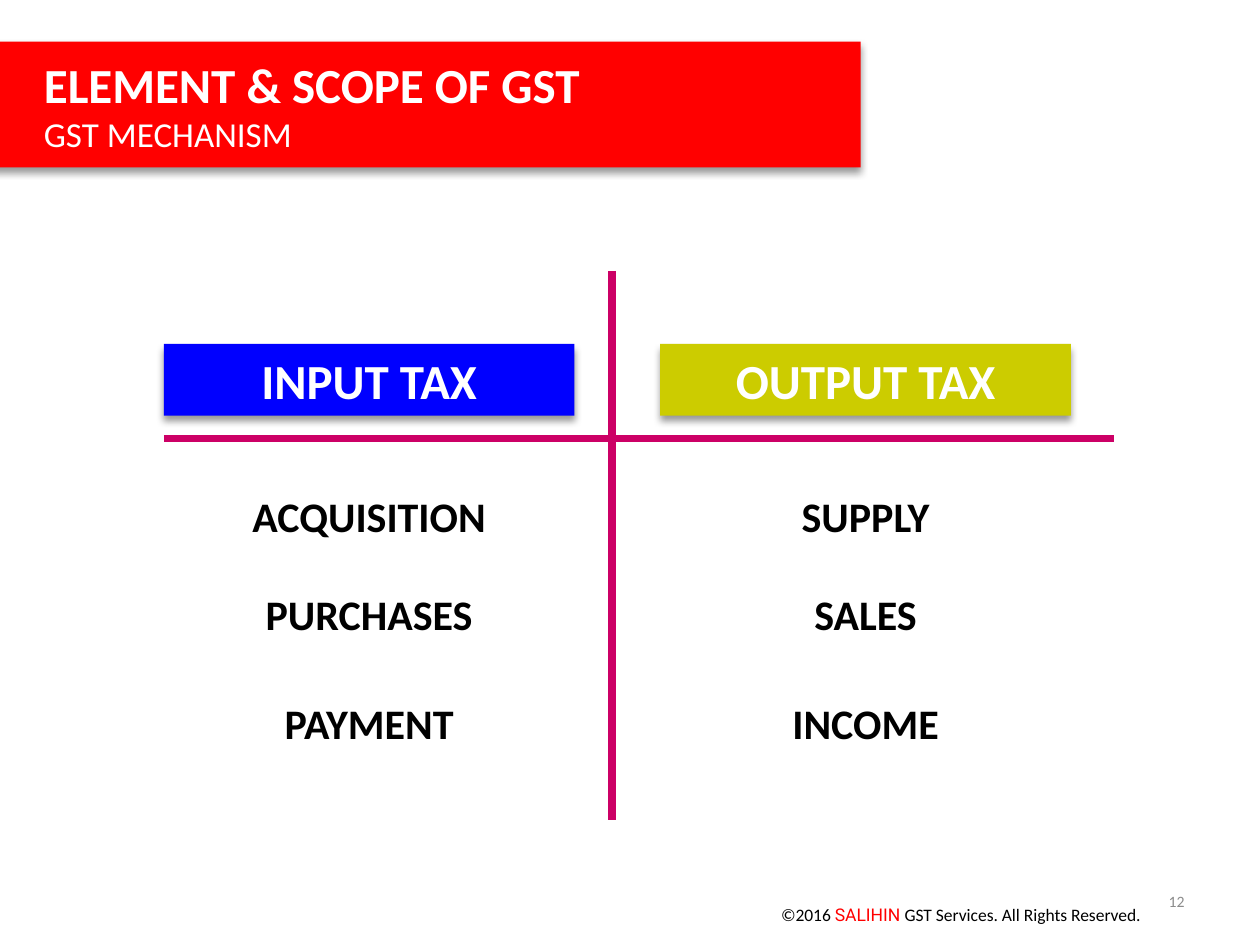
import pptx
import pptx.util
import pptx.dml.color
import pptx.enum.shapes
import pptx.enum.text
import pptx.oxml.ns
from lxml import etree

THEME = {
    "font": "Calibri", "accent_font": "Roboto",
    "red": "FF0000", "blue": "0000FF", "olive": "CCCC00", "rule": "CC0066",
    "white": "FFFFFF", "black": "000000", "grey": "8C8C8C",
    "head": 28, "sub": 20, "item": 24, "foot": 10, "number": 9, "rule_width": 4.5,
}

# A paragraph is a list of runs: (text, size, colour, bold, font)
BANNER = [
    [("ELEMENT & SCOPE OF GST", "head", "white", True, "font")],
    [("GST MECHANISM", "sub", "white", False, "font")],
]
COLUMNS = [
    ("INPUT TAX", "blue", ["ACQUISITION", "PURCHASES", "PAYMENT"]),
    ("OUTPUT TAX", "olive", ["SUPPLY", "SALES", "INCOME"]),
]
FOOTER = [[
    ("©2016 ", "foot", "black", False, "font"),
    ("SALIHIN ", "foot", "red", False, "accent_font"),
    ("GST Services. All Rights Reserved.", "foot", "black", False, "font"),
]]
NUMBER = [[("12", "number", "grey", False, "font")]]

# Grid of the T-account, in inches
COL_LEFT, COL_STEP, COL_WIDTH = 1.3, 3.94, 3.26
HEAD_TOP, HEAD_HEIGHT = 2.73, 0.57
ROW_TOPS, ROW_HEIGHT = [3.84, 4.62, 5.49], 0.5
RULES = [((4.86, 2.15), (4.86, 6.51)), ((COL_LEFT, 3.48), (8.84, 3.48))]

Inches, Pt = pptx.util.Inches, pptx.util.Pt
ALIGN, ANCHOR = pptx.enum.text.PP_ALIGN, pptx.enum.text.MSO_ANCHOR
qn = pptx.oxml.ns.qn


def rgb(name):
    return pptx.dml.color.RGBColor.from_string(THEME[name])


def write(s, paragraphs, align=ALIGN.LEFT, anchor=ANCHOR.TOP, indent=0):
    tf = s.text_frame
    tf.word_wrap = True
    tf.vertical_anchor = anchor
    for i, runs in enumerate(paragraphs):
        p = tf.paragraphs[0] if i == 0 else tf.add_paragraph()
        p.alignment = align
        if indent:
            p._p.get_or_add_pPr().set("marL", str(Inches(indent)))
        for text, size, colour, bold, font in runs:
            r = p.add_run()
            r.text = text
            r.font.name = THEME[font]
            r.font.size = Pt(THEME[size])
            r.font.bold = bold
            r.font.color.rgb = rgb(colour)


def add_text(shapes, box, paragraphs, **layout):
    write(shapes.add_textbox(*map(Inches, box)), paragraphs, **layout)


def add_panel(shapes, box, fill, paragraphs, **layout):
    """Add a filled rectangle with a soft shadow below it."""
    s = shapes.add_shape(pptx.enum.shapes.MSO_SHAPE.RECTANGLE, *map(Inches, box))
    s.fill.solid()
    s.fill.fore_color.rgb = rgb(fill)
    s.line.fill.background()
    s.shadow.inherit = False
    effects = s._element.spPr.find(qn("a:effectLst"))
    shadow = etree.SubElement(effects, qn("a:outerShdw"), blurRad=str(Pt(4)),
                              dist=str(Pt(3)), dir="5400000", rotWithShape="0")
    colour = etree.SubElement(shadow, qn("a:srgbClr"), val=THEME["black"])
    etree.SubElement(colour, qn("a:alpha"), val="40000")
    write(s, paragraphs, **layout)


def add_rule(shapes, start, end):
    s = shapes.add_connector(pptx.enum.shapes.MSO_CONNECTOR.STRAIGHT,
                             *map(Inches, start + end))
    s.line.color.rgb = rgb("rule")
    s.line.width = Pt(THEME["rule_width"])
    etree.SubElement(s._element.spPr, qn("a:effectLst"))


def main():
    prs = pptx.Presentation()
    prs.slide_width, prs.slide_height = Inches(10), Inches(7.5)
    shapes = prs.slides.add_slide(prs.slide_layouts[6]).shapes

    add_text(shapes, (6.1, 7.06, 3.21, 0.4), FOOTER, anchor=ANCHOR.MIDDLE)
    add_panel(shapes, (-0.25, 0.33, 7.08, 1), "red", BANNER,
              anchor=ANCHOR.MIDDLE, indent=0.5)
    for start, end in RULES:
        add_rule(shapes, start, end)
    for i, (title, fill, items) in enumerate(COLUMNS):
        left = COL_LEFT + i * COL_STEP
        add_panel(shapes, (left, HEAD_TOP, COL_WIDTH, HEAD_HEIGHT), fill,
                  [[(title, "head", "white", True, "font")]], align=ALIGN.CENTER)
        for top, item in zip(ROW_TOPS, items):
            add_text(shapes, (left, top, COL_WIDTH, ROW_HEIGHT),
                     [[(item, "item", "black", True, "font")]], align=ALIGN.CENTER)
    add_text(shapes, (7.17, 6.95, 2.33, 0.4), NUMBER,
             align=ALIGN.RIGHT, anchor=ANCHOR.MIDDLE)

    prs.save("out.pptx")


if __name__ == "__main__":
    main()
